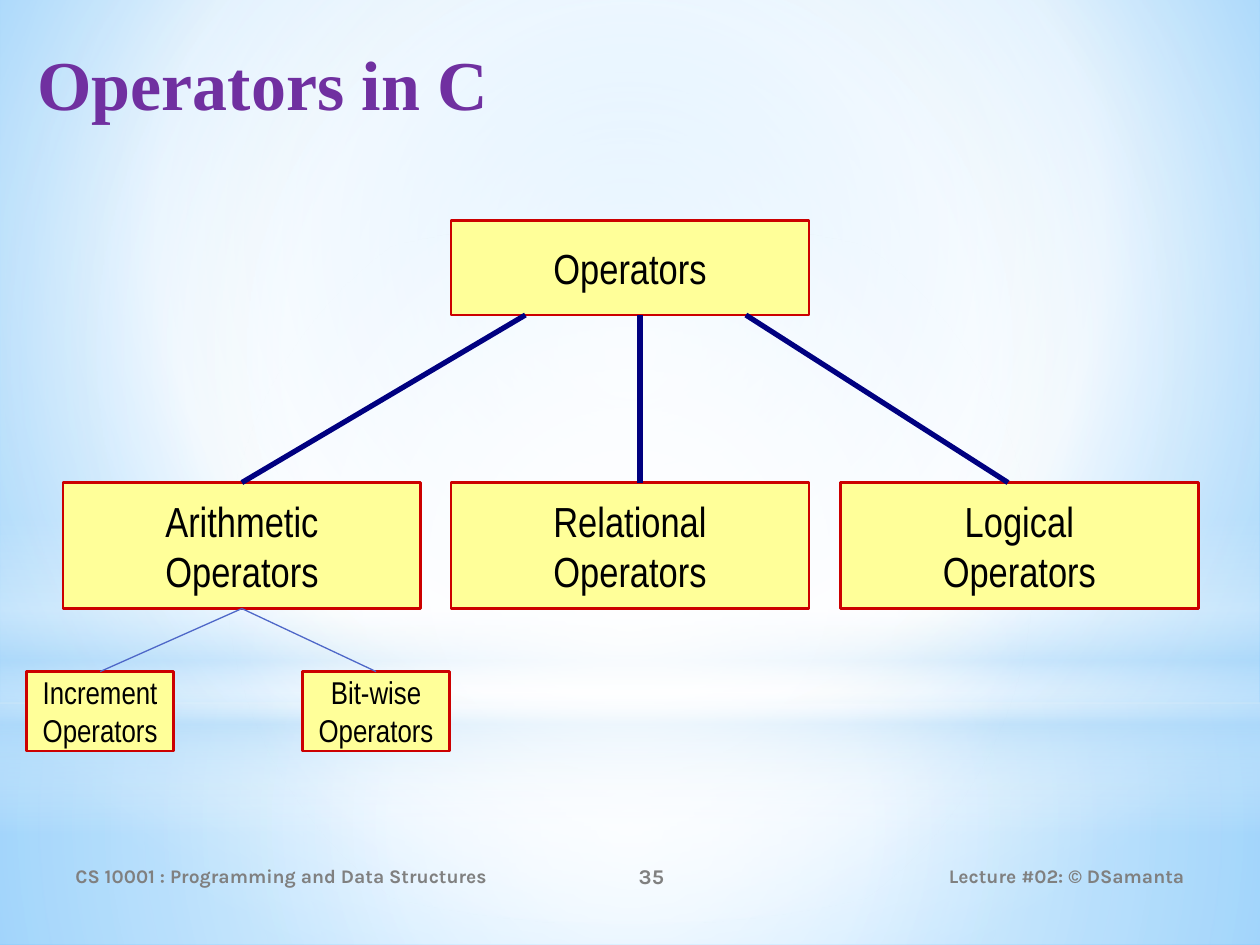
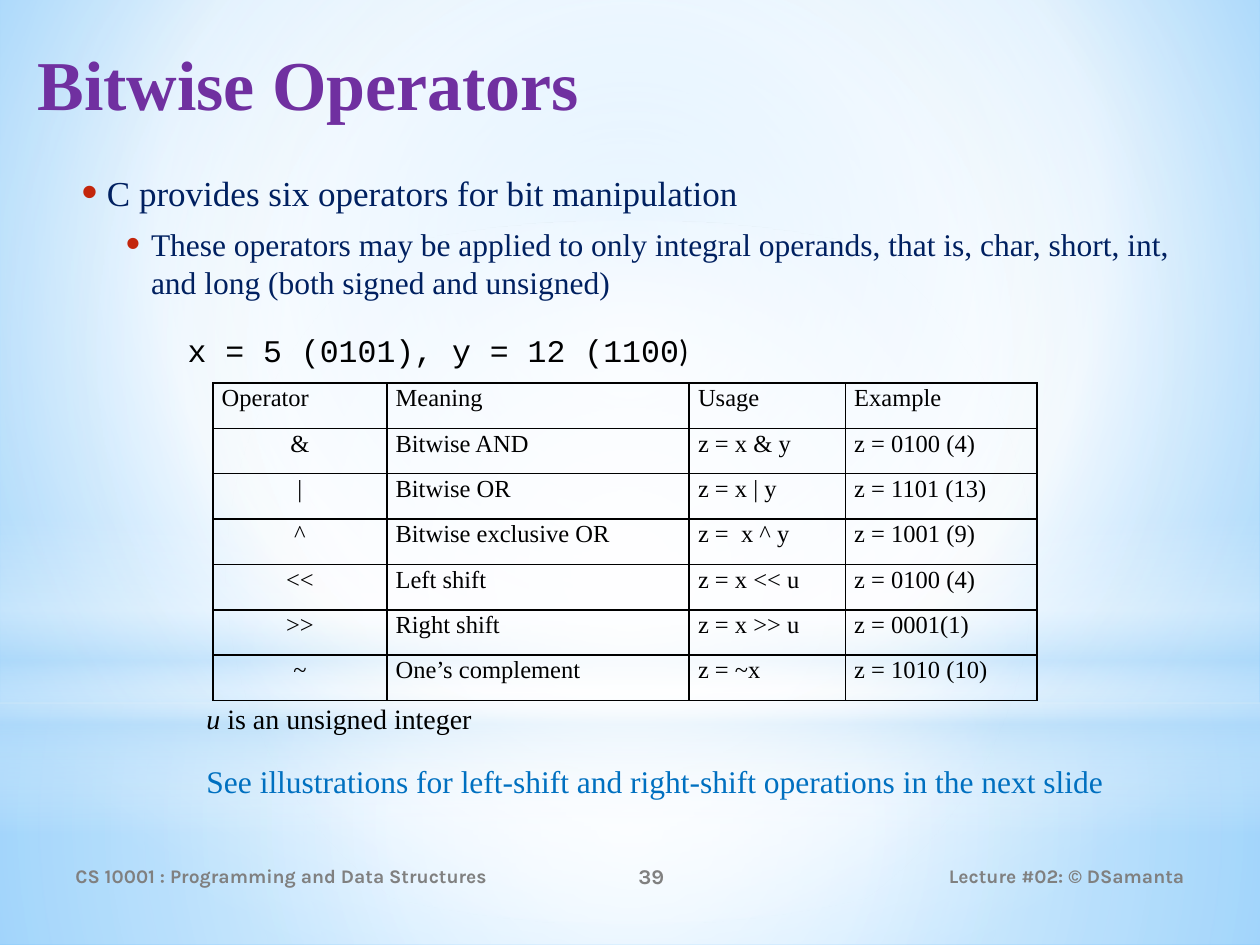
from lxml import etree
from pptx import Presentation, util as u
from pptx.dml.color import RGBColor
from pptx.enum import shapes, text
from pptx.oxml import parse_xml
from pptx.oxml.ns import nsdecls, qn


class Theme:
    """Colours, and text faces as (size, font, colour, bold)."""
    box, edge, link, twig = "FFFF99", "CC0000", "000080", "4E67C8"
    dot, rule = "C3260C", "000000"
    title = (40, "Times New Roman", "7030A0", True)
    foot = (11, "Karla", "808080", True)
    page = (12, "Karla", "808080", True)
    node = (24, "Arial Narrow", "000000", False)
    leaf = (18, "Arial Narrow", "000000", False)
    lead = (20, "Times New Roman", "002060", False)
    sub = (18, "Times New Roman", "002060", False)
    cell = (14, "Times New Roman", "000000", False)
    code = (18, "Courier New", "000000", False)
    note = (16, "Times New Roman", "000000", False)
    hint = (18, "Times New Roman", "0070C0", False)


LEFT, MID, RIGHT = text.PP_ALIGN.LEFT, text.PP_ALIGN.CENTER, text.PP_ALIGN.RIGHT
TOP, CORE = text.MSO_ANCHOR.TOP, text.MSO_ANCHOR.MIDDLE
RECT, OVAL = shapes.MSO_SHAPE.RECTANGLE, shapes.MSO_SHAPE.OVAL


def shade(owner, stops, focus=None):
    """Fill with (position, colour, opacity) stops: round a focus, or downwards."""
    owner.fill.gradient() if hasattr(owner, "fill") else owner.background.fill.gradient()
    marks = "".join(
        f'<a:gs pos="{pos * 1000}"><a:srgbClr val="{tint}">'
        f'<a:alpha val="{alpha * 1000}"/></a:srgbClr></a:gs>'
        for pos, tint, alpha in stops)
    if focus:
        sides = " ".join(f'{k}="{v * 1000}"' for k, v in zip("ltrb", focus))
        course = f'<a:path path="circle"><a:fillToRect {sides}/></a:path>'
    else:
        course = '<a:lin ang="5400000" scaled="0"/>'
    grad = next(owner.element.iter(qn("a:gradFill")))
    grad.getparent().replace(grad, parse_xml(
        f'<a:gradFill {nsdecls("a")} rotWithShape="1"><a:gsLst>{marks}</a:gsLst>'
        f'{course}</a:gradFill>'))


def write(host, words, face, align=LEFT, anchor=TOP, wrap=True):
    """Set the text of a shape or cell, one paragraph a line, in one face."""
    frame = host.text_frame
    frame.text = words
    frame.word_wrap = wrap
    frame.vertical_anchor = anchor
    size, font, tint, bold = face
    for para in frame.paragraphs:
        para.alignment = align
        for run in para.runs:
            run.font.size, run.font.name, run.font.bold = u.Pt(size), font, bold
            run.font.color.rgb = RGBColor.from_string(tint)
    return frame


deck = Presentation()
deck.slide_width, deck.slide_height = u.Inches(10), u.Inches(7.5)
shade(deck.slide_master, [(0, "9ED5FF", 100), (60, "FFFFFF", 100),
                          (100, "5BB9FF", 100)], (20, 10, 20, 60))

# Shared backdrop, title and footer
hub = (50, 50, 50, 50)
glows = [
    (RECT, (0, 5.58, 10, 1.92),
     [(0, "FFFFFF", 91), (37, "FFFFFF", 76), (100, "B4DCFA", 79)], hub),
    (RECT, (0, 0, 10, 5.58),
     [(0, "FFFFFF", 89), (48, "FFFFFF", 62), (100, "B4DCFA", 79)], hub),
    (RECT, (0, 4.12, 10, 2.5),
     [(0, "FFFFFF", 0), (29, "FFFFFF", 30), (45, "B4DCFA", 40),
      (55, "FFFFFF", 26), (65, "B4DCFA", 60), (100, "FFFFFF", 0)], None),
    (OVAL, (0, 1.75, 10, 5.58), [(0, "FFFFFF", 100), (56, "FFFFFF", 0)], hub),
]
pages = []
for title, number in [("Operators in C", "35"), ("Bitwise Operators", "39")]:
    page = deck.slides.add_slide(deck.slide_layouts[6])
    for form, at, stops, focus in glows:
        glow = page.shapes.add_shape(form, *map(u.Inches, at))
        glow.shadow.inherit = False
        glow.line.fill.background()
        shade(glow, stops, focus)
    for at, words, face, align, anchor in [
        ((0.2, 0.27, 9.53, 1.25), title, Theme.title, LEFT, TOP),
        ((0.5, 6.75, 3.67, 0.4), "CS 10001 : Programming and Data Structures",
         Theme.foot, LEFT, CORE),
        ((4.17, 6.75, 2, 0.4), number, Theme.page, MID, CORE),
        ((6.75, 6.75, 2.75, 0.4), "Lecture #02: © DSamanta", Theme.foot, RIGHT, CORE),
    ]:
        write(page.shapes.add_textbox(*map(u.Inches, at)), words, face, align, anchor)
    pages.append(page)
tree, bits = pages

# Operator tree
nodes = {}
for name, words, at, face in [
    ("root", "Operators", (3.58, 1.75, 2.84, 0.75), Theme.node),
    ("arith", "Arithmetic\nOperators", (0.5, 3.83, 2.84, 1), Theme.node),
    ("rel", "Relational\nOperators", (3.58, 3.83, 2.84, 1), Theme.node),
    ("logic", "Logical\nOperators", (6.67, 3.83, 2.84, 1), Theme.node),
    ("inc", "Increment\nOperators", (0.21, 5.33, 1.17, 0.63), Theme.leaf),
    ("bit", "Bit-wise\nOperators", (2.4, 5.33, 1.17, 0.63), Theme.leaf),
]:
    node = nodes[name] = tree.shapes.add_shape(RECT, *map(u.Inches, at))
    node.shadow.inherit = False
    node.fill.solid()
    node.fill.fore_color.rgb = RGBColor.from_string(Theme.box)
    node.line.color.rgb = RGBColor.from_string(Theme.edge)
    node.line.width = u.Pt(1.5)
    write(node, words, face, MID, CORE, wrap=False)

for ends, start, stop, tint, width in [
    ((5.08, 3.83, 5.08, 2.5), None, None, Theme.link, 3),
    ((1.92, 3.83, 4.17, 2.5), ("arith", 0), None, Theme.link, 3),
    ((8, 3.83, 5.92, 2.5), None, None, Theme.link, 3),
    ((1.92, 4.83, 0.79, 5.33), ("arith", 2), ("inc", 0), Theme.twig, 0.75),
    ((1.92, 4.83, 3.01, 5.33), ("arith", 2), ("bit", 0), Theme.twig, 0.75),
]:
    link = tree.shapes.add_connector(shapes.MSO_CONNECTOR.STRAIGHT, *map(u.Inches, ends))
    if start:
        link.begin_connect(nodes[start[0]], start[1])
    if stop:
        link.end_connect(nodes[stop[0]], stop[1])
    link.line.color.rgb = RGBColor.from_string(tint)
    link.line.width = u.Pt(width)
    etree.SubElement(link.element.spPr, qn("a:effectLst"))

# Bitwise bullets
body = bits.shapes.add_textbox(*map(u.Inches, (0.5, 1.31, 9.15, 1.2)))
points = [
    ("C provides six operators for bit manipulation", Theme.lead, 0.25),
    ("These operators may be applied to only integral operands, that is, "
     "char, short, int, and long (both signed and unsigned)", Theme.sub, 0.6),
]
frame = write(body, "\n".join(words for words, _, _ in points), Theme.sub)
for level, (para, (_, face, inset)) in enumerate(zip(frame.paragraphs, points)):
    para.level = level
    para.runs[0].font.size = u.Pt(face[0])
    para.space_before, para.space_after = u.Pt(face[0] * 0.2), u.Pt(3)
    props = para._p.get_or_add_pPr()
    props.set("marL", str(u.Inches(inset)))
    props.set("indent", str(u.Inches(-0.2)))
    tint = etree.SubElement(props, qn("a:buClr"))
    etree.SubElement(tint, qn("a:srgbClr"), val=Theme.dot)
    etree.SubElement(props, qn("a:buSzPct"), val="130000")
    etree.SubElement(props, qn("a:buFont"), typeface="Arial")
    etree.SubElement(props, qn("a:buChar"), char="•")

# Operator table
rows = [
    ("Operator", "Meaning", "Usage", "Example"),
    ("&", "Bitwise AND", "z = x & y", "z = 0100 (4)"),
    ("|", "Bitwise OR", "z = x | y", "z = 1101 (13)"),
    ("^", "Bitwise exclusive OR", "z =  x ^ y", "z = 1001 (9)"),
    ("<<", "Left shift", "z = x << u", "z = 0100 (4)"),
    (">>", "Right shift", "z = x >> u", "z = 0001(1)"),
    ("~", "One’s complement", "z = ~x", "z = 1010 (10)"),
]
grid = bits.shapes.add_table(len(rows), 4, *map(u.Inches, (1.69, 3.04, 6.54, 2.52))).table
grid.first_row = grid.horz_banding = False
for col, width in zip(grid.columns, (1.38, 2.4, 1.24, 1.52)):
    col.width = u.Inches(width)
for r, row in enumerate(rows):
    grid.rows[r].height = u.Inches(0.36)
    for c, words in enumerate(row):
        cell = grid.cell(r, c)
        frame = write(cell, words, Theme.cell, MID if r and not c else LEFT)
        frame.paragraphs[0].line_spacing = 1.07
        cell.margin_left = cell.margin_right = u.Inches(0.07)
        cell.margin_top = cell.margin_bottom = 0
        props = cell._tc.get_or_add_tcPr()
        for side in ("lnL", "lnR", "lnT", "lnB"):
            edge = etree.SubElement(props, qn(f"a:{side}"), w=str(u.Pt(1)))
            ink = etree.SubElement(edge, qn("a:solidFill"))
            etree.SubElement(ink, qn("a:srgbClr"), val=Theme.rule)
        cell.fill.background()

# Lines around the table
lines = []
for at, words, face in [
    ((1.54, 6, 7.59, 0.4),
     "See illustrations for left-shift and right-shift operations in the next slide",
     Theme.hint),
    ((1.39, 2.56, 7.63, 0.43), "x = 5 (0101), y = 12 (1100", Theme.code),
    ((1.54, 5.5, 7.63, 0.39), "u", Theme.note),
]:
    frame = write(bits.shapes.add_textbox(*map(u.Inches, at)), words, face)
    lines.append(frame.paragraphs[0])
_, code, note = lines
note.runs[0].font.italic = True
for para, words, font in [(code, ")", "Calibri"),
                          (note, " is an unsigned integer", "Times New Roman")]:
    para.line_spacing, para.space_after = 1.07, u.Pt(8)
    tail = para.add_run()
    tail.text = words
    tail.font.name, tail.font.size = font, para.runs[0].font.size
    tail.font.color.rgb = para.runs[0].font.color.rgb

deck.save("out.pptx")
